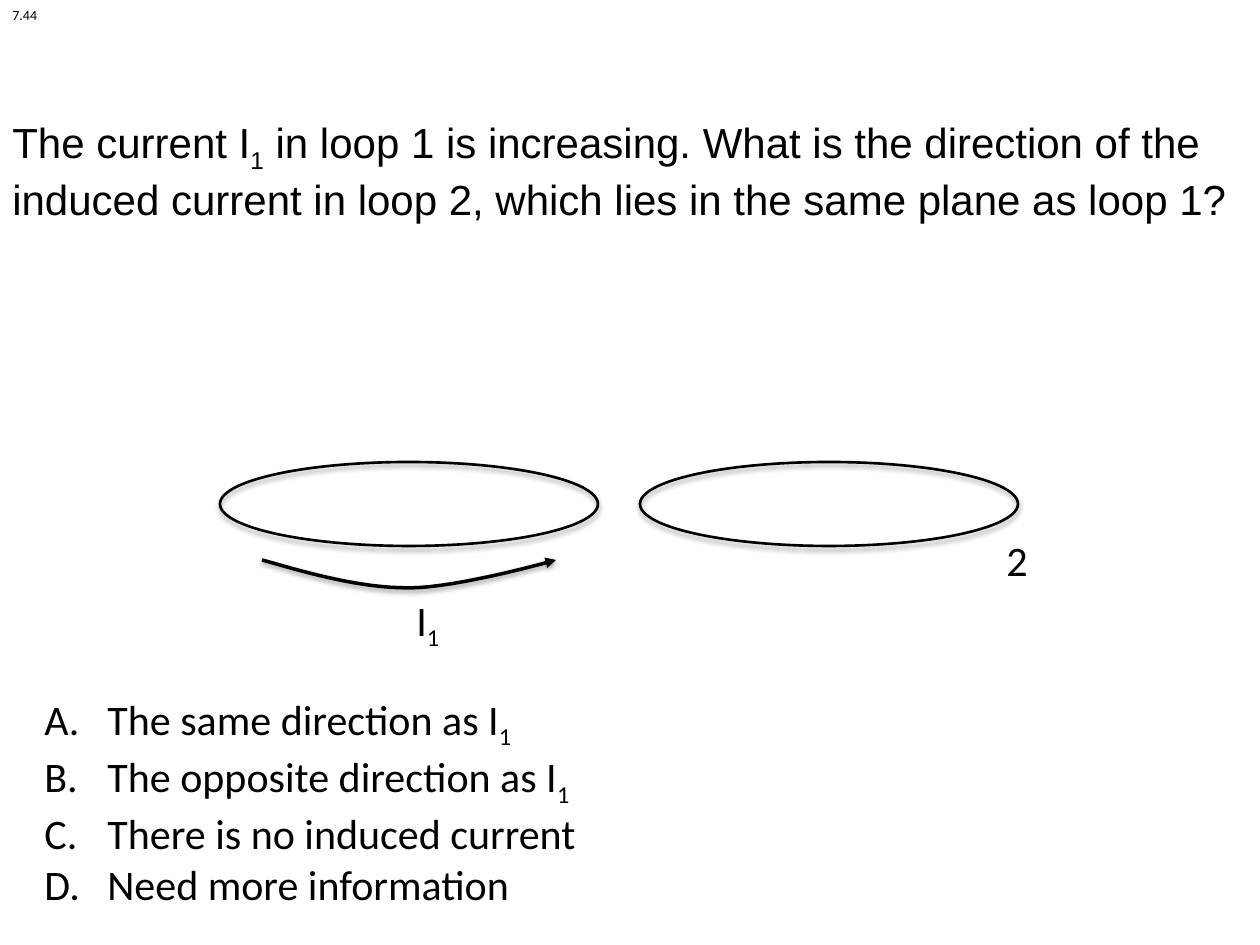
from pptx import Presentation
from pptx import util as u
from pptx.dml.color import RGBColor
from pptx.enum import shapes, text
from pptx.oxml import parse_xml
from pptx.oxml.ns import nsdecls
from lxml import etree

PX = 914400 / 126
COLORS = {"ink": "000000", "shadow": "000000"}
A = "{http://schemas.openxmlformats.org/drawingml/2006/main}"


def emu(*lengths):
    return [u.Emu(round(n * PX)) for n in lengths]


def rgb(name):
    return RGBColor.from_string(COLORS[name])


def add_runs(p, parts, size, font):
    for i, part in enumerate(parts):
        r = p.add_run()
        r.text = part
        for key, value in {"size": u.Pt(size), "name": font}.items():
            setattr(r.font, key, value)
        r.font.color.rgb = rgb("ink")
        if i % 2:
            r.font._element.set("baseline", "-25000")


def add_text(s, box, paragraphs, size=24, font="Calibri", **formats):
    tf = s.shapes.add_textbox(*emu(*box)).text_frame
    settings = {"word_wrap": False, "auto_size": text.MSO_AUTO_SIZE.SHAPE_TO_FIT_TEXT}
    settings.update(formats)
    for key, value in settings.items():
        setattr(tf, key, value)
    for i, parts in enumerate(paragraphs):
        p = tf.add_paragraph() if i else tf.paragraphs[0]
        add_runs(p, parts, size, font)
    return tf


def style_outline(sp, width, alpha, distance):
    sp.fill.background()
    sp.line.color.rgb = rgb("ink")
    sp.line.width = u.Pt(width)
    sp.shadow.inherit = False
    effects = sp._element.spPr.find(A + "effectLst")
    effects.append(parse_xml(
        f'<a:outerShdw {nsdecls("a")} blurRad="{u.Pt(3.1)}" dist="{u.Pt(distance)}" '
        f'dir="5400000" rotWithShape="0"><a:srgbClr val="{COLORS["shadow"]}">'
        f'<a:alpha val="{alpha * 1000}"/></a:srgbClr></a:outerShdw>'))


def bezier(points, steps=16):
    (ax, ay), (bx, by), (cx, cy), (dx, dy) = points
    for i in range(1, steps + 1):
        t = i / steps
        k = 1 - t
        weights = k ** 3, 3 * k * k * t, 3 * k * t * t, t ** 3
        yield (sum(w * x for w, x in zip(weights, (ax, bx, cx, dx))),
               sum(w * y for w, y in zip(weights, (ay, by, cy, dy))))


def add_current_arrow(s, x, y, w, h):
    halves = [
        [(0, 0), (w / 6, h / 2), (w / 3, h), (w / 2, h)],
        [(w / 2, h), (w * 2 / 3, h), (w, 0), (w, 0)],
    ]
    fine = 10
    builder = s.shapes.build_freeform(0, 0, scale=PX / fine)
    curve = [(px * fine, py * fine) for half in halves for px, py in bezier(half)]
    builder.add_line_segments(curve, close=False)
    sp = builder.convert_to_shape(*emu(x, y))
    style_outline(sp, 2, 38, 1.6)
    etree.SubElement(sp.line._get_or_add_ln(), A + "tailEnd", type="triangle")


def add_question(s, box):
    parts = ["The current I", "1", " in loop 1 is increasing. What is the direction of the "
             "induced current in loop 2, which lies in the same plane as loop 1?"]
    add_text(s, box, [parts], font="Arial", word_wrap=True,
             auto_size=text.MSO_AUTO_SIZE.NONE, vertical_anchor=text.MSO_ANCHOR.MIDDLE)


def add_answers(s, box):
    answers = [["The same direction as I", "1"], ["The opposite direction as I", "1"],
               ["There is no induced current"], ["Need more information"]]
    tf = add_text(s, box, answers, word_wrap=True)
    indent = emu(63)[0]
    for p in tf.paragraphs:
        pPr = p._p.get_or_add_pPr()
        pPr.set("marL", str(indent))
        pPr.set("indent", str(-indent))
        etree.SubElement(pPr, A + "buFont", typeface="+mj-lt")
        etree.SubElement(pPr, A + "buAutoNum", type="alphaUcPeriod")


def add_loops(s, x, y, w, h):
    loop_w, loop_h = 378, 84
    for left in (x, x + w - loop_w):
        sp = s.shapes.add_shape(shapes.MSO_SHAPE.OVAL, *emu(left, y, loop_w, loop_h))
        style_outline(sp, 1.5, 35, 1.8)
    add_current_arrow(s, x + 42, y + 98, 294, 28)
    add_text(s, (x + 184, y + 126, 53, 64), [["I", "1"]])
    add_text(s, (x + 774, y + 66, 49, 63), [["2"]])


def main():
    prs = Presentation()
    prs.slide_width, prs.slide_height = emu(1260, 945)
    s = prs.slides.add_slide(prs.slide_layouts[6])
    add_question(s, (0, 78, 1260, 185))
    add_answers(s, (32, 687, 866, 217))
    add_loops(s, 220, 462, 798, 190)
    add_text(s, (0, 0, 50, 30), [["7.44"]], size=8)
    prs.save("out.pptx")


if __name__ == "__main__":
    main()
